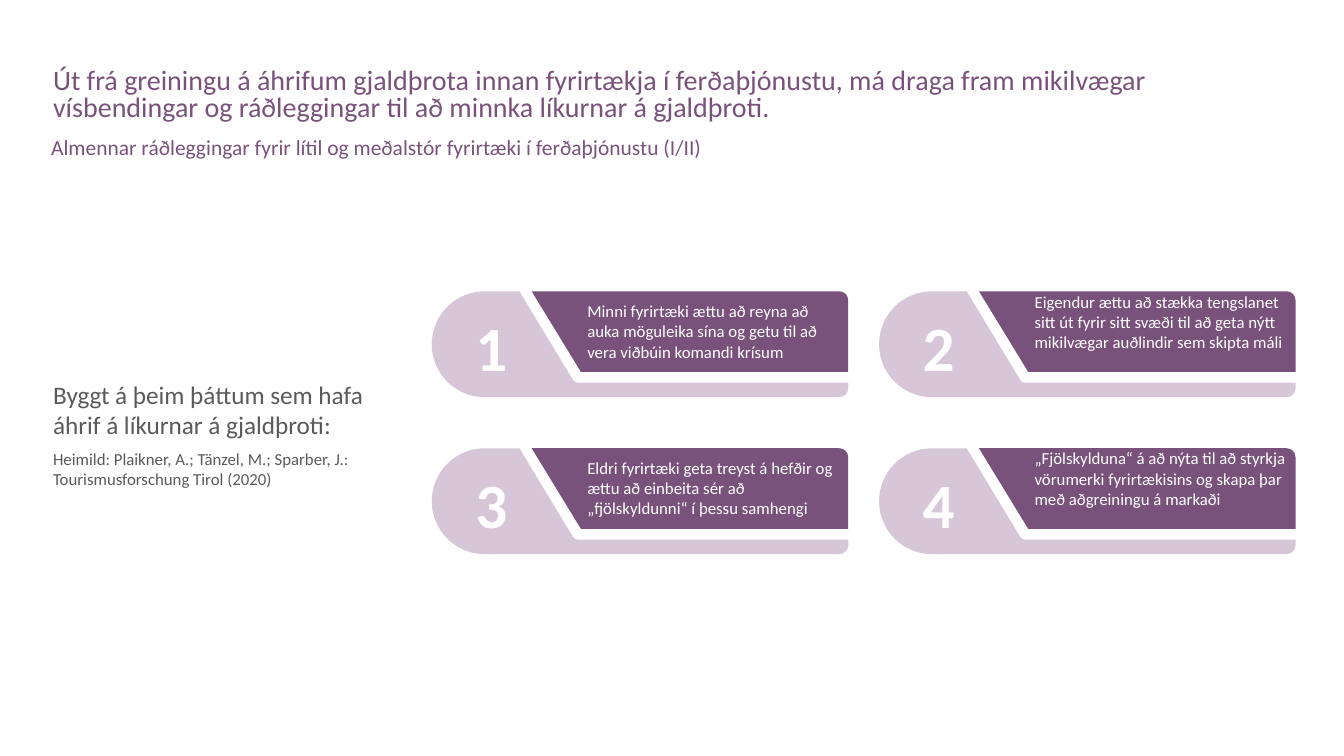
import pptx
import pptx.dml.color
import pptx.enum.text
import pptx.util
from pptx.oxml.ns import qn

Pt = pptx.util.Pt
PURPLE, LILAC, GREY, WHITE = "79527B", "D7C6D8", "595A59", "FFFFFF"
COLUMN_STEP, ROW_STEP = 319.5, 112.1
PANEL = [[(106.6, 57.6)], [(297.5, 57.6)], [(297.5, 6.4)],
         [(297.5, 2.8), (294.6, 0), (291.1, 0)], [(71.4, 0)]]
BASE = [[(104.4, 65.3)], [(103, 65.3), (101.6, 64.6), (100.9, 63.4)],
        [(62.6, 0)], [(37.8, 0)],
        [(16.9, 0), (0, 16.9), (0, 37.8)], [(0, 58.7), (16.9, 75.6), (37.8, 75.6)],
        [(291.1, 75.6)], [(294.6, 75.6), (297.5, 72.7), (297.5, 69.2)], [(297.5, 65.3)]]
CARDS = [
    ("Minni fyrirtæki ættu að reyna að auka möguleika sína og getu til að vera viðbúin komandi krísum", 3.4, 193.7),
    ("Eigendur ættu að stækka tengslanet sitt út fyrir sitt svæði til að geta nýtt mikilvægar auðlindir sem skipta máli", -3.6, 193.7),
    ("Eldri fyrirtæki geta treyst á hefðir og ættu að einbeita sér að „fjölskyldunni“ í þessu samhengi", 3.2, 193.7),
    ("„Fjölskylduna“ á að nýta til að styrkja vörumerki fyrirtækisins og skapa þar með aðgreiningu á markaði", -3.6, 198),
]


def colour(value):
    """Return the colour for a hex string."""
    return pptx.dml.color.RGBColor.from_string(value)


def apply(target, formats):
    """Set every attribute named in a dict of format values."""
    for name, value in formats.items():
        setattr(target, name, value)


def write(para, text, size, ink, bold=False, **formats):
    """Write one run in a paragraph and format both."""
    apply(para, formats)
    span = para.add_run()
    span.text = text
    apply(span.font, {"name": "Calibri", "size": Pt(size), "bold": bold})
    span.font.color.rgb = colour(ink)


def place(shape, left, top, width, height):
    """Move a placeholder to a box given in points."""
    apply(shape, {"left": Pt(left), "top": Pt(top), "width": Pt(width), "height": Pt(height)})


def unbullet(para):
    """Remove the bullet and the hanging indent of a paragraph."""
    properties = para._p.get_or_add_pPr()
    properties.set("marL", "0")
    properties.set("indent", "0")
    properties.append(properties.makeelement(qn("a:buNone"), {}))


def bend(line, points):
    """Replace a straight segment by a Bézier curve."""
    curve = line.makeelement(qn("a:cubicBezTo"), {})
    for x, y in points:
        curve.append(curve.makeelement(qn("a:pt"), {"x": str(int(x)), "y": str(int(y))}))
    line.getparent().replace(line, curve)


def outline(page, left, top, segments, fill):
    """Draw a filled outline of lines and curves relative to a corner."""
    placed = [[(Pt(left + x), Pt(top + y)) for x, y in segment] for segment in segments]
    builder = page.shapes.build_freeform(*placed[0][-1])
    builder.add_line_segments([segment[-1] for segment in placed[1:]], close=True)
    shape = builder.convert_to_shape()
    lines = list(shape._element.iter(qn("a:lnTo")))
    for line, segment in zip(lines, placed[1:]):
        if len(segment) == 3:
            bend(line, [(x - shape.left, y - shape.top) for x, y in segment])
    shape.shadow.inherit = False
    shape.fill.solid()
    shape.fill.fore_color.rgb = colour(fill)
    shape.line.fill.background()


def label(page, left, top, width, height, text, **formats):
    """Add a white wrapped text box."""
    box = page.shapes.add_textbox(Pt(left), Pt(top), Pt(width), Pt(height))
    apply(box.text_frame, {"word_wrap": True, "auto_size": pptx.enum.text.MSO_AUTO_SIZE.SHAPE_TO_FIT_TEXT})
    write(box.text_frame.paragraphs[0], text, ink=WHITE, **formats)


def add_card(page, left, top, number, text, text_top, text_width):
    """Build one numbered card at the given corner."""
    outline(page, left, top, PANEL, PURPLE)
    outline(page, left, top, BASE, LILAC)
    label(page, left + 23.9, top + 9, 37.4, 62, str(number), size=45, bold=True,
          alignment=pptx.enum.text.PP_ALIGN.CENTER)
    label(page, left + 104, top + text_top, text_width, 51, text, size=12)


def add_cards(page, left, top):
    """Lay the cards out in two columns."""
    for index, (text, text_top, text_width) in enumerate(CARDS):
        row, column = divmod(index, 2)
        add_card(page, left + column * COLUMN_STEP, top + row * ROW_STEP,
                 index + 1, text, text_top, text_width)


def add_heading(title, subtitle, left, top):
    """Fill the title and the line below it."""
    texts = [
        (title, left, top, 46, 20, 0.8, "Út frá greiningu á áhrifum gjaldþrota innan fyrirtækja í ferðaþjónustu, má draga fram mikilvægar vísbendingar og ráðleggingar til að minnka líkurnar á gjaldþroti."),
        (subtitle, left - 1.4, top + 51.8, 20, 15.3, 0.7, "Almennar ráðleggingar fyrir lítil og meðalstór fyrirtæki í ferðaþjónustu (I/II)"),
    ]
    for shape, x, y, height, size, spacing, text in texts:
        place(shape, x, y, 903, height)
        apply(shape.text_frame, {"auto_size": pptx.enum.text.MSO_AUTO_SIZE.NONE, "word_wrap": True,
                                 "vertical_anchor": pptx.enum.text.MSO_ANCHOR.TOP})
        para = shape.text_frame.paragraphs[0]
        unbullet(para)
        write(para, text, size, PURPLE, line_spacing=spacing, space_before=Pt(0),
              alignment=pptx.enum.text.PP_ALIGN.LEFT)


def add_basis(body, left, top, width, height):
    """Fill the side text and its source."""
    place(body, left, top, width, height)
    frame = body.text_frame
    apply(frame, {"auto_size": pptx.enum.text.MSO_AUTO_SIZE.NONE, "word_wrap": True,
                  "vertical_anchor": pptx.enum.text.MSO_ANCHOR.MIDDLE})
    texts = [("Byggt á þeim þáttum sem hafa áhrif á líkurnar á gjaldþroti:", 18, 0),
             ("Heimild: Plaikner, A.; Tänzel, M.; Sparber, J.: Tourismusforschung Tirol (2020)", 12, 6)]
    for index, (text, size, before) in enumerate(texts):
        para = frame.add_paragraph() if index else frame.paragraphs[0]
        unbullet(para)
        write(para, text, size, GREY, space_before=Pt(before))


def main():
    """Build and save the deck."""
    deck = pptx.Presentation()
    apply(deck, {"slide_width": Pt(960), "slide_height": Pt(540)})
    page = deck.slides.add_slide(deck.slide_layouts[3])
    title, basis, subtitle = page.placeholders
    add_heading(title, subtitle, 30.7, 45.4)
    add_basis(basis, 30.7, 128.6, 251.3, 362.9)
    add_cards(page, 308.4, 208.1)
    deck.save("out.pptx")


if __name__ == "__main__":
    main()
